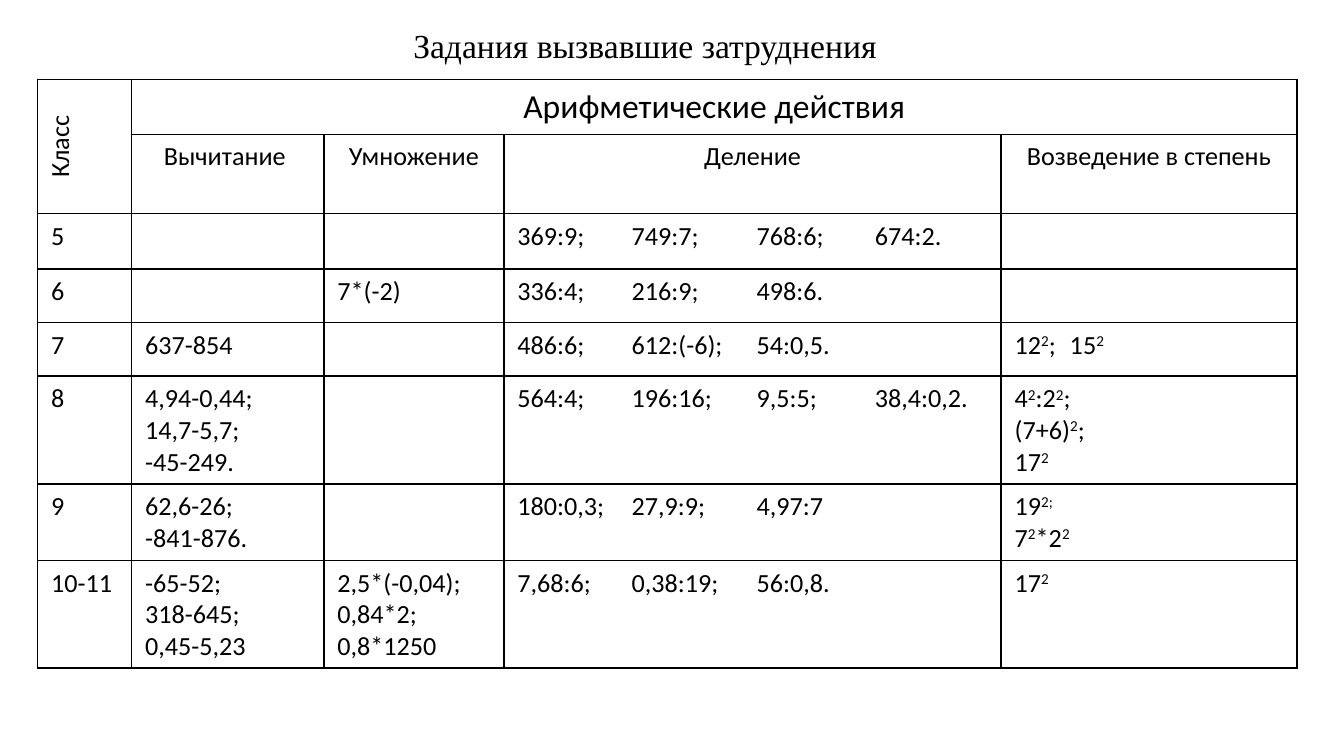
from dataclasses import dataclass

from lxml import etree
from pptx import Presentation
from pptx.dml.color import RGBColor
from pptx.enum import text
from pptx.oxml import ns
from pptx.util import Inches, Pt


@dataclass(frozen=True)
class Theme:
    ink: RGBColor = RGBColor(0, 0, 0)
    title_font: str = "Times New Roman"
    table_font: str = "Calibri"
    large: int = 18
    normal: int = 14
    border: int = 1


THEME = Theme()
COLUMN_WIDTHS = [0.7, 1.43, 1.34, 3.7, 2.2]
ROW_HEIGHTS = [0.41, 0.59, 0.41, 0.4, 0.4, 0.8, 0.57, 0.8]
TAB_STOPS = {3: [0.85, 1.78, 2.66], 4: [0.41]}
HEADINGS = ["", "Вычитание ", "Умножение", "Деление", "Возведение в степень"]
# Carets enclose superscripts, line ends separate paragraphs.
TASKS = [
    ["5", "", "", "369:9;\t749:7;\t768:6;\t674:2.", ""],
    ["6", "", "7*(-2)", "336:4;\t216:9;\t498:6.", ""],
    ["7", "637-854", "", "486:6;\t612:(-6);\t54:0,5.", "12^2^;\t15^2^"],
    ["8", "4,94-0,44;\n14,7-5,7;\n-45-249.", "",
     "564:4;\t196:16;\t9,5:5;\t38,4:0,2.", "4^2^:2^2^;\n(7+6)^2^;\n17^2^"],
    ["9", "62,6-26;\n-841-876.", "",
     "180:0,3;\t27,9:9;\t4,97:7", "19^2;^\n7^2^*2^2^"],
    ["10-11", "-65-52;\n318-645;\n0,45-5,23", "2,5*(-0,04);\n0,84*2;\n0,8*1250",
     "7,68:6;\t0,38:19;\t56:0,8.", "17^2^"],
]


def style_paragraph(para, font_name, size, centred):
    para.font.name = font_name
    para.font.size = Pt(size)
    para.font.color.rgb = THEME.ink
    para.alignment = text.PP_ALIGN.CENTER if centred else text.PP_ALIGN.LEFT


def add_tab_stops(para, stops):
    properties = para._p.get_or_add_pPr()
    tabs = etree.Element(ns.qn("a:tabLst"))
    for stop in stops:
        etree.SubElement(tabs, ns.qn("a:tab"), pos=str(Inches(stop)), algn="l")
    properties.find(ns.qn("a:defRPr")).addprevious(tabs)


def add_spans(para, content):
    """Write the content, raising every second part between carets."""
    for index, part in enumerate(content.split("^")):
        if part:
            span = para.add_run()
            span.text = part
            if index % 2:
                span._r.get_or_add_rPr().set("baseline", "30000")


def fill_cell(cell, content, size=THEME.normal, centred=False, stops=()):
    frame = cell.text_frame
    for index, line in enumerate(content.split("\n")):
        para = frame.add_paragraph() if index else frame.paragraphs[0]
        style_paragraph(para, THEME.table_font, size, centred)
        if "\t" in line:
            add_tab_stops(para, stops)
        add_spans(para, line)


def draw_borders(cell):
    properties = cell._tc.get_or_add_tcPr()
    for side in ("lnL", "lnR", "lnT", "lnB"):
        line = etree.SubElement(properties, ns.qn(f"a:{side}"), w=str(Pt(THEME.border)))
        fill = etree.SubElement(line, ns.qn("a:solidFill"))
        etree.SubElement(fill, ns.qn("a:srgbClr"), val=str(THEME.ink))
    cell.fill.background()


def add_title(slide):
    box = slide.shapes.add_textbox(Inches(2.95), Inches(0.14), Inches(3.7), Inches(0.4))
    box.text_frame.word_wrap = True
    para = box.text_frame.paragraphs[0]
    para.text = "Задания вызвавшие затруднения"
    style_paragraph(para, THEME.title_font, THEME.large, centred=True)


def add_task_table(slide):
    frame = slide.shapes.add_table(
        len(ROW_HEIGHTS), len(COLUMN_WIDTHS), Inches(0.28), Inches(0.59),
        Inches(sum(COLUMN_WIDTHS)), Inches(sum(ROW_HEIGHTS)))
    table = frame.table
    table.first_row = table.horz_banding = False
    for column, width in zip(table.columns, COLUMN_WIDTHS):
        column.width = Inches(width)
    for row, height in zip(table.rows, ROW_HEIGHTS):
        row.height = Inches(height)
    for cell in table.iter_cells():
        draw_borders(cell)

    grade = table.cell(0, 0)
    grade.merge(table.cell(1, 0))
    grade._tc.get_or_add_tcPr().set("vert", "vert270")
    fill_cell(grade, "Класс", centred=True)
    operations = table.cell(0, 1)
    operations.merge(table.cell(0, len(COLUMN_WIDTHS) - 1))
    fill_cell(operations, "Арифметические действия", THEME.large, centred=True)

    for row, contents in enumerate([HEADINGS] + TASKS, start=1):
        for column, content in enumerate(contents):
            fill_cell(table.cell(row, column), content, centred=row == 1,
                      stops=TAB_STOPS.get(column, ()))


def main():
    deck = Presentation()
    deck.slide_width = Inches(10)
    deck.slide_height = deck.slide_width * 9 // 16
    slide = deck.slides.add_slide(deck.slide_layouts[6])
    add_title(slide)
    add_task_table(slide)
    deck.save("out.pptx")


if __name__ == "__main__":
    main()
